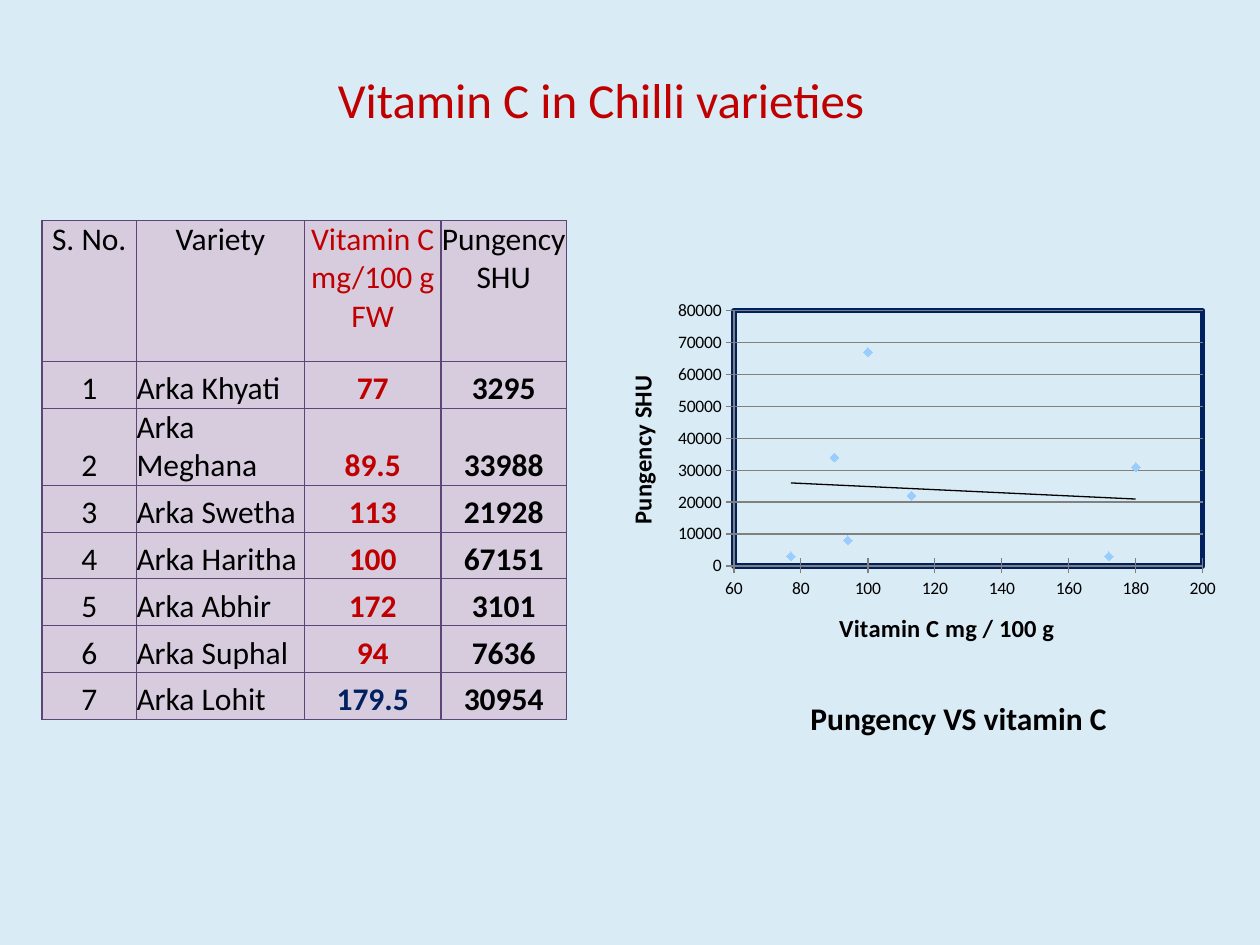
from dataclasses import dataclass

import pptx
import pptx.chart.data
import pptx.dml.color
import pptx.enum.chart
import pptx.enum.text
import pptx.oxml
import pptx.oxml.ns
import pptx.util

COLUMNS, ROWS = 120, 90  # slide grid, twelve units to the inch
UNIT = pptx.util.Inches(10) // COLUMNS
CHART_COLUMNS, CHART_ROWS = 60, 36
FONT = "Calibri"
BACKGROUND, LILAC, PURPLE = "D9EBF5", "D6CCDE", "5E4577"
BLACK, RED, NAVY, GRAY, SKY = "000000", "C00000", "002060", "808080", "99CCFF"
CENTER, LEFT = pptx.enum.text.PP_ALIGN.CENTER, pptx.enum.text.PP_ALIGN.LEFT


@dataclass
class Variety:
    name: str
    vitamin_c: float
    pungency: int
    vitamin_color: str = RED


@dataclass
class Label:
    text: str
    column: float
    row: float
    width: float
    height: float
    size: int
    color: str = BLACK
    bold: bool = False


HEADERS = ["S. No.", "Variety", "Vitamin C mg/100 g FW", "Pungency SHU"]
COLUMN_WIDTHS = [9, 16, 13, 11.95]
VARIETIES = [
    Variety("Arka Khyati", 77, 3295),
    Variety("Arka Meghana", 89.5, 33988),
    Variety("Arka Swetha", 113, 21928),
    Variety("Arka Haritha", 100, 67151),
    Variety("Arka Abhir", 172, 3101),
    Variety("Arka Suphal", 94, 7636),
    Variety("Arka Lohit", 179.5, 30954, NAVY),
]
LABELS = [
    Label("Vitamin C in Chilli varieties", 31, 6, 53, 6.87, 28, RED),
    Label("Pungency VS vitamin C", 76, 66, 30.8, 4.85, 18, bold=True),
]


def grid(*units: float) -> list[int]:
    return [round(unit * UNIT) for unit in units]


def rgb(color: str) -> pptx.dml.color.RGBColor:
    return pptx.dml.color.RGBColor.from_string(color)


def format_font(font, size: float, color: str = BLACK, bold: bool = False) -> None:
    font.name, font.size, font.bold = FONT, pptx.util.Pt(size), bold
    font.color.rgb = rgb(color)


def write(frame, text: str, size: float, color: str = BLACK, bold: bool = False, align=LEFT) -> None:
    paragraph = frame.paragraphs[0]
    paragraph.alignment = align
    run = paragraph.add_run()
    run.text = text
    format_font(run.font, size, color, bold)


def format_line(line, color: str, width: float) -> None:
    line.color.rgb = rgb(color)
    line.width = pptx.util.Pt(width)


def parse_xml(tag: str, content: str):
    return pptx.oxml.parse_xml(f"<{tag} {pptx.oxml.ns.nsdecls('a', 'c')}>{content}</{tag}>")


def outline(tag: str, color: str, width: float):
    line = parse_xml(tag, f'<a:solidFill><a:srgbClr val="{color}"/></a:solidFill>')
    line.set("w", str(pptx.util.Pt(width)))
    return line


def add_label(slide, label: Label) -> None:
    box = slide.shapes.add_textbox(*grid(label.column, label.row, label.width, label.height))
    box.text_frame.word_wrap = False
    box.text_frame.auto_size = pptx.enum.text.MSO_AUTO_SIZE.SHAPE_TO_FIT_TEXT
    write(box.text_frame, label.text, label.size, label.color, label.bold)


def fill_cell(cell, text: str, anchor, **text_format) -> None:
    cell.margin_left = cell.margin_right = cell.margin_top = cell.margin_bottom = 0
    cell.vertical_anchor = anchor
    cell.fill.solid()
    cell.fill.fore_color.rgb = rgb(LILAC)
    write(cell.text_frame, text, 18, **text_format)
    properties = cell._tc.get_or_add_tcPr()
    for index, side in enumerate("LRTB"):
        properties.insert(index, outline(f"a:ln{side}", PURPLE, 0.75))


def add_variety_table(slide) -> None:
    heights = [13.43] + [6.67 if v.name == "Arka Meghana" else 4.46 for v in VARIETIES]
    position = grid(4, 21, sum(COLUMN_WIDTHS), sum(heights))
    table = slide.shapes.add_table(len(heights), len(HEADERS), *position).table
    table.first_row = table.horz_banding = False
    for column, width in zip(table.columns, grid(*COLUMN_WIDTHS)):
        column.width = width
    for row, height in zip(table.rows, grid(*heights)):
        row.height = height

    top, bottom = pptx.enum.text.MSO_ANCHOR.TOP, pptx.enum.text.MSO_ANCHOR.BOTTOM
    for index, header in enumerate(HEADERS):
        fill_cell(table.cell(0, index), header, top, color=RED if index == 2 else BLACK, align=CENTER)
    for number, variety in enumerate(VARIETIES, 1):
        values = [
            (str(number), dict(align=CENTER)),
            (variety.name, dict(align=LEFT)),
            (str(variety.vitamin_c), dict(color=variety.vitamin_color, bold=True, align=CENTER)),
            (str(variety.pungency), dict(bold=True, align=CENTER)),
        ]
        for index, (text, text_format) in enumerate(values):
            fill_cell(table.cell(number, index), text, bottom, **text_format)


def place(element, target: str = "", **units: float) -> None:
    """Fix a chart part at columns (x, w) and rows (y, h) of the chart."""
    content = f'<c:layoutTarget val="{target}"/>' if target else ""
    content += '<c:xMode val="edge"/><c:yMode val="edge"/>'
    for name, value in units.items():
        content += f'<c:{name} val="{value / (CHART_COLUMNS if name in "xw" else CHART_ROWS)}"/>'
    layout = parse_xml("c:layout", f"<c:manualLayout>{content}</c:manualLayout>")
    present = element.find(pptx.oxml.ns.qn("c:layout"))
    if present is None:
        element.insert(0, layout)
    else:
        element.replace(present, layout)


def format_axis(axis, title: str, low: float, high: float, step: float, x: float, y: float) -> None:
    axis.minimum_scale, axis.maximum_scale, axis.major_unit = low, high, step
    axis.major_tick_mark = pptx.enum.chart.XL_TICK_MARK.CROSS
    axis.minor_tick_mark = pptx.enum.chart.XL_TICK_MARK.NONE
    axis.tick_labels.number_format = "General"
    axis.tick_labels.number_format_is_linked = False
    format_font(axis.tick_labels.font, 10)
    format_line(axis.format.line, GRAY, 0.75)
    write(axis.axis_title.text_frame, title, 14, bold=True, align=CENTER)
    place(axis.axis_title._element, x=x, y=y)


def add_pungency_chart(slide) -> None:
    data = pptx.chart.data.XyChartData()
    points = data.add_series("Series 1")
    for variety in VARIETIES:
        points.add_data_point(round(variety.vitamin_c), round(variety.pungency, -3))
    kind = pptx.enum.chart.XL_CHART_TYPE.XY_SCATTER
    chart = slide.shapes.add_chart(kind, *grid(57, 28, CHART_COLUMNS, CHART_ROWS), data).chart
    chart.has_legend = chart.has_title = False
    format_font(chart.font, 10)
    chart.plots[0].vary_by_categories = False

    # Axes and gridlines
    format_axis(chart.category_axis, "Vitamin C mg / 100 g", 60, 200, 20, x=22.5, y=29.75)
    format_axis(chart.value_axis, "Pungency SHU", 0, 80000, 10000, x=2.1, y=7.3)
    chart.category_axis.has_major_gridlines = False
    chart.value_axis.has_major_gridlines = True
    format_line(chart.value_axis.major_gridlines.format.line, GRAY, 0.75)
    body = chart.value_axis.axis_title._element.find(".//" + pptx.oxml.ns.qn("a:bodyPr"))
    body.set("rot", "-5400000")
    body.set("vert", "horz")

    # Markers and linear trend
    series = chart.plots[0].series[0]
    series.smooth = False
    series.format.line.fill.background()
    series.marker.style = pptx.enum.chart.XL_MARKER_STYLE.DIAMOND
    series.marker.size = 5
    series.marker.format.fill.solid()
    series.marker.format.fill.fore_color.rgb = rgb(SKY)
    format_line(series.marker.format.line, SKY, 0.75)
    trend = parse_xml("c:trendline", '<c:spPr/><c:trendlineType val="linear"/>'
                      '<c:dispRSqr val="0"/><c:dispEq val="0"/>')
    trend[0].append(outline("a:ln", BLACK, 0.75))
    series._element.find(pptx.oxml.ns.qn("c:xVal")).addprevious(trend)

    # Framed plot area
    plot_area = chart._chartSpace.chart.plotArea
    place(plot_area, "inner", x=12.9, y=1.6, w=44.65, h=24.3)
    frame = parse_xml("c:spPr", "<a:noFill/>")
    frame.append(outline("a:ln", NAVY, 3))
    plot_area.append(frame)


def main() -> None:
    presentation = pptx.Presentation()
    presentation.slide_width, presentation.slide_height = COLUMNS * UNIT, ROWS * UNIT
    slide = presentation.slides.add_slide(presentation.slide_layouts[6])
    slide.background.fill.solid()
    slide.background.fill.fore_color.rgb = rgb(BACKGROUND)
    add_variety_table(slide)
    add_pungency_chart(slide)
    for label in LABELS:
        add_label(slide, label)
    presentation.save("out.pptx")


if __name__ == "__main__":
    main()
